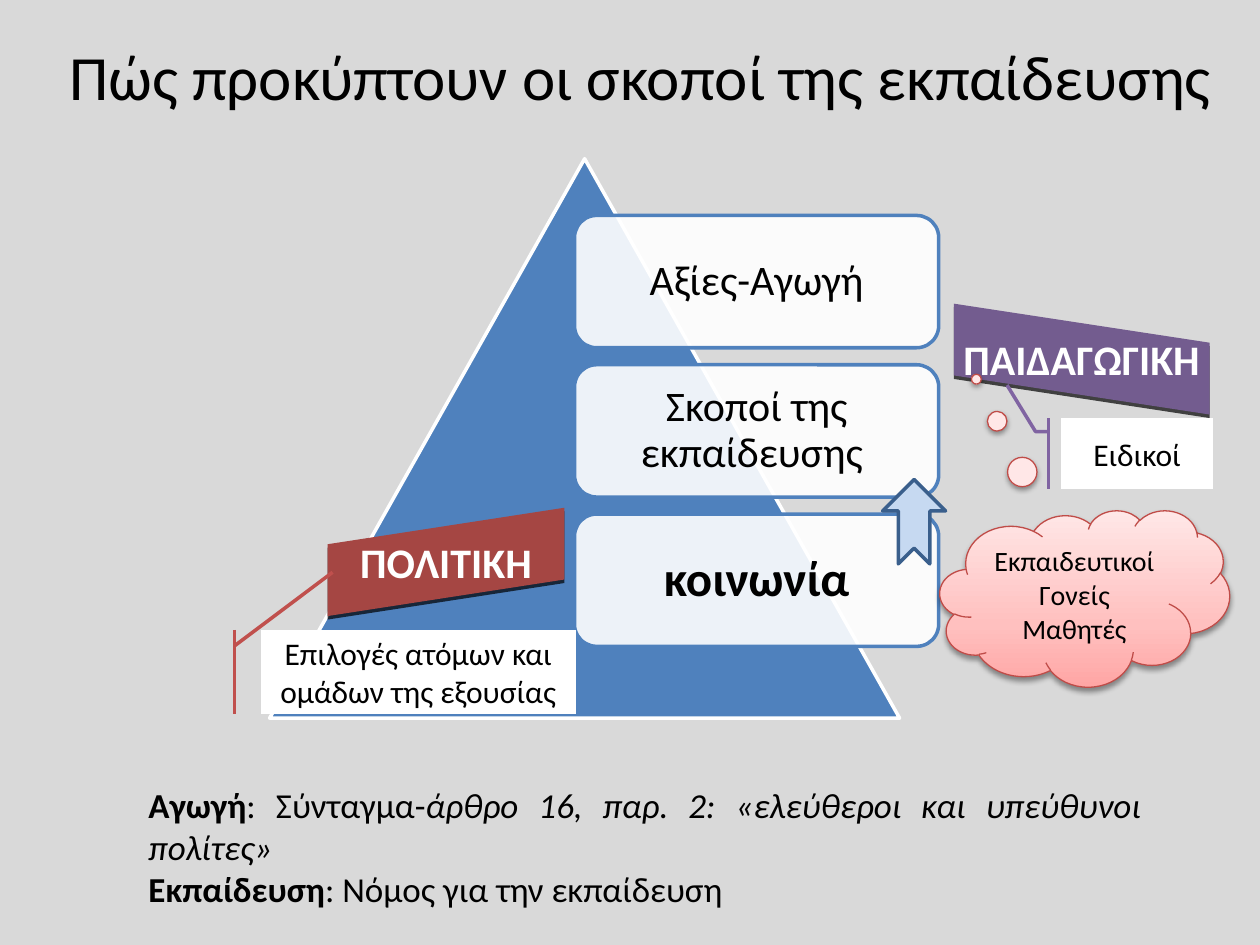
import copy
import pptx
import pptx.util
import pptx.dml.color
import pptx.enum.shapes
import pptx.enum.text
import pptx.oxml
import pptx.oxml.ns

Inches = pptx.util.Inches
SHAPE = pptx.enum.shapes.MSO_SHAPE
ALIGN = pptx.enum.text.PP_ALIGN
ANCHOR = pptx.enum.text.MSO_ANCHOR


def color(value):
    return pptx.dml.color.RGBColor.from_string(value)


def paint(sp, fill, line=None, weight=2):
    sp.shadow.inherit = False
    sp.fill.solid()
    sp.fill.fore_color.rgb = color(fill)
    if line:
        sp.line.color.rgb = color(line)
        sp.line.width = pptx.util.Pt(weight)
    else:
        sp.line.fill.background()


def add_shape(s, kind, box, fill, line=None, weight=2, adjustments=()):
    sp = s.shapes.add_shape(kind, *map(Inches, box))
    paint(sp, fill, line, weight)
    for i, value in enumerate(adjustments):
        sp.adjustments[i] = value
    return sp


def write(sp, paragraphs, size, font_color="000000", align=ALIGN.CENTER, wrap=True):
    tf = sp.text_frame
    tf.word_wrap = wrap
    for i, runs in enumerate(paragraphs):
        p = tf.paragraphs[0] if i == 0 else tf.add_paragraph()
        p.alignment = align
        for text, bold, italic in runs:
            r = p.add_run()
            r.text = text
            r.font.name = "Calibri"
            r.font.size = pptx.util.Pt(size)
            r.font.bold = bold
            r.font.italic = italic
            r.font.color.rgb = color(font_color)
    return tf


def write_centered(sp, lines, size, font_color="000000", bold=False, wrap=True):
    tf = write(sp, [[(line, bold, False)] for line in lines], size, font_color, wrap=wrap)
    tf.vertical_anchor = ANCHOR.MIDDLE
    return tf


def add_shadow(sp, opacity, blur, distance):
    effects = sp._element.spPr.find(pptx.oxml.ns.qn("a:effectLst"))
    effects.append(pptx.oxml.parse_xml(
        f'<a:outerShdw {pptx.oxml.ns.nsdecls("a")} blurRad="{pptx.util.Pt(blur)}" '
        f'dist="{pptx.util.Pt(distance)}" dir="5400000" rotWithShape="0">'
        f'<a:srgbClr val="000000"><a:alpha val="{opacity * 1000}"/></a:srgbClr></a:outerShdw>'))


def add_title(s, box):
    sp = s.shapes.add_textbox(*map(Inches, box))
    write(sp, [[("Πώς προκύπτουν οι σκοποί της εκπαίδευσης", False, False)]], 36,
          align=ALIGN.LEFT, wrap=False)


def add_pyramid(s, box):
    left, top, width, height = box
    add_shape(s, SHAPE.ISOSCELES_TRIANGLE, box, "4F81BD", "FFFFFF")
    levels = [("Αξίες-Αγωγή", 24, False), ("Σκοποί της εκπαίδευσης ", 24, False),
              ("κοινωνία", 28, True)]
    for i, (text, size, bold) in enumerate(levels):
        level = (left + 2.42, top + 0.45 + i * 1.185, 2.89, 1.05)
        sp = add_shape(s, SHAPE.ROUNDED_RECTANGLE, level, "FFFFFF", "4F81BD")
        rgb = sp._element.spPr.find(".//" + pptx.oxml.ns.qn("a:srgbClr"))
        rgb.append(pptx.oxml.parse_xml(
            f'<a:alpha {pptx.oxml.ns.nsdecls("a")} val="90000"/>'))
        tf = write_centered(sp, [text], size, bold=bold)
        tf.paragraphs[0].line_spacing = 0.9


def add_banner(s, box, slope, fill, text):
    left, top, width, height = box
    start, end = max(-slope, 0), max(slope, 0)
    points = [(left, top + start), (left + width, top + end),
              (left + width, top + end + height), (left, top + start + height)]
    points = [(Inches(x), Inches(y)) for x, y in points]
    builder = s.shapes.build_freeform(*points[0], scale=1.0)
    builder.add_line_segments(points[1:], close=True)
    sp = builder.convert_to_shape()
    paint(sp, fill)
    add_shadow(sp, 70, 0, 2)
    write_centered(sp, [text], 24, "FFFFFF", bold=True, wrap=False)


def add_callout(s, kind, box, line, adjustments, text):
    sp = add_shape(s, kind, box, "FFFFFF", line, adjustments=adjustments)
    write_centered(sp, [text], 18)


def add_up_arrow(s, box):
    sp = add_shape(s, SHAPE.NOTCHED_RIGHT_ARROW, box, "C6D9F1", "3A5F8C")
    sp.rotation = 270


def add_cloud(s, box):
    sp = add_shape(s, SHAPE.CLOUD_CALLOUT, box, "FFC0BF", "BF4C48", 0.75, (-0.374, -1.243))
    sp.fill.gradient()
    sp.fill.gradient_angle = 90
    stop_list = sp._element.spPr.find(".//" + pptx.oxml.ns.qn("a:gsLst"))
    stop_list.insert(1, copy.deepcopy(stop_list[0]))
    stops = [(0, "FFA6A5"), (0.35, "FFC0BF"), (1, "FFE7E7")]
    for stop, (position, value) in zip(sp.fill.gradient_stops, stops):
        stop.position = position
        stop.color.rgb = color(value)
    add_shadow(sp, 38, 3.1, 1.6)
    write_centered(sp, ["Εκπαιδευτικοί", "Γονείς", "Μαθητές"], 16)


def add_notes_text(s, box):
    sp = s.shapes.add_textbox(*map(Inches, box))
    write(sp, [
        [("Αγωγή", True, False), (": Σύνταγμα-", False, False),
         ("άρθρο 16, παρ. 2: «ελεύθεροι και υπεύθυνοι πολίτες» ", False, True)],
        [("Εκπαίδευση", True, False), (": Νόμος για την εκπαίδευση", False, False)],
    ], 20, align=ALIGN.JUSTIFY)


def main():
    prs = pptx.Presentation()
    prs.slide_width, prs.slide_height = Inches(10), Inches(7.5)
    s = prs.slides.add_slide(prs.slide_layouts[6])
    s.background.fill.solid()
    s.background.fill.fore_color.rgb = color("D9D9D9")
    add_pyramid(s, (2.14, 1.26, 5, 4.44))
    add_notes_text(s, (1.08, 6.17, 8.08, 1.11))
    add_banner(s, (2.6, 4.03, 1.88, 0.57), -0.29, "A54643", "ΠΟΛΙΤΙΚΗ")
    add_banner(s, (7.57, 2.41, 2.03, 0.57), 0.31, "735C8F", "ΠΑΙΔΑΓΩΓΙΚΗ")
    add_up_arrow(s, (6.92, 3.89, 0.67, 0.5))
    add_title(s, (0.45, 0.25, 9.36, 0.71))
    add_callout(s, SHAPE.LINE_CALLOUT_1_ACCENT_BAR, (2.07, 5, 2.5, 0.67), "C0504D",
                (0.188, -0.083, -0.683, 0.228), "Επιλογές ατόμων και ομάδων της εξουσίας")
    add_callout(s, SHAPE.LINE_CALLOUT_2_ACCENT_BAR, (8.42, 3.32, 1.21, 0.56), "8064A2",
                (0.188, -0.083, 0.188, -0.167, -0.471, -0.354), "Ειδικοί")
    add_cloud(s, (7.46, 4.05, 2.3, 1.4))
    prs.save("out.pptx")


if __name__ == "__main__":
    main()
